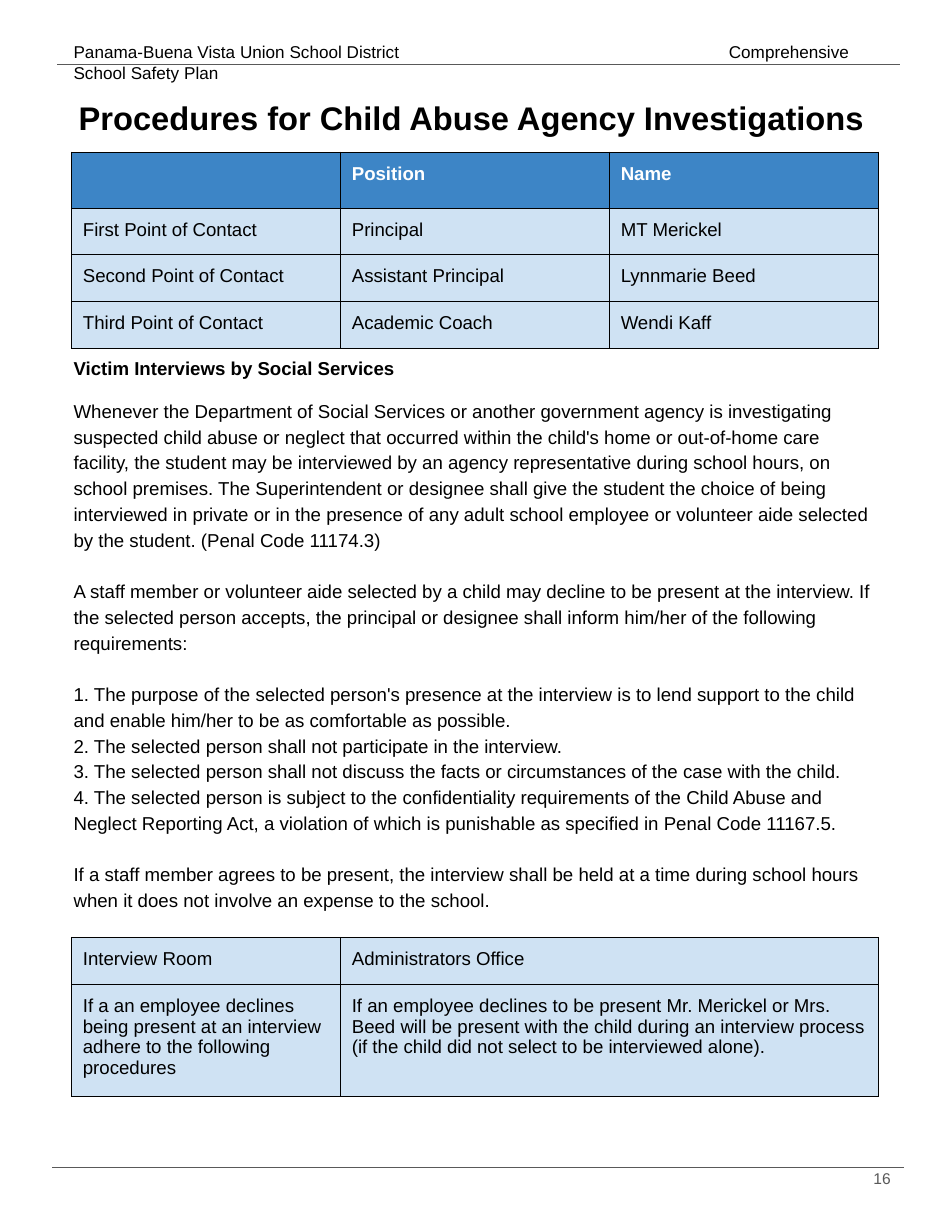
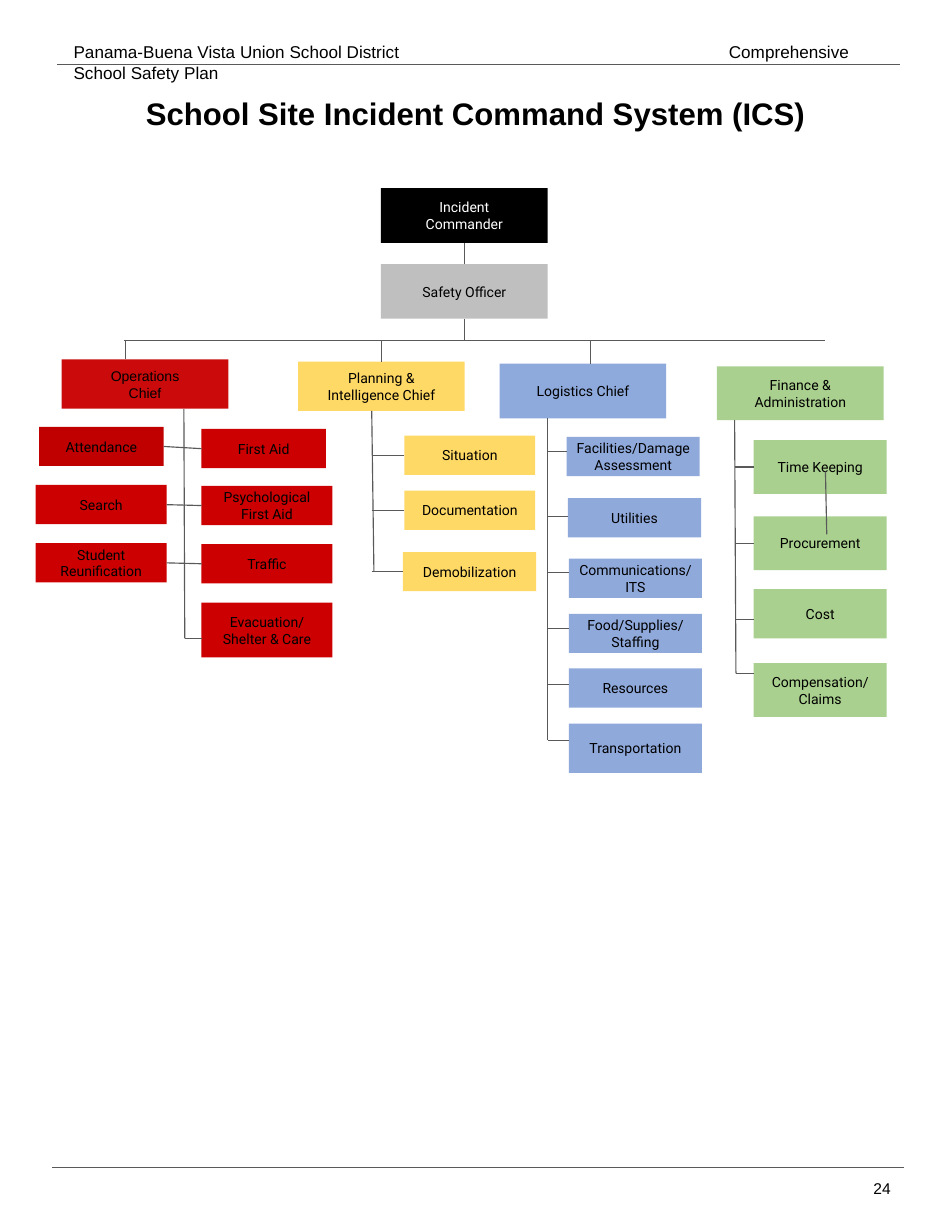
from lxml import etree
from pptx import Presentation
from pptx.dml.color import RGBColor
from pptx.enum.shapes import MSO_CONNECTOR, MSO_SHAPE
from pptx.enum.text import MSO_ANCHOR, PP_ALIGN
from pptx.oxml import parse_xml
from pptx.oxml.ns import nsdecls, qn
from pptx.util import Cm, Pt

COLORS = {
    "black": "000000", "white": "FFFFFF", "rule": "595959",
    "table_head": "3D85C6", "table_body": "CFE2F3",
    "safety": "BFBFBF", "operations_chief": "CB0B0B", "operations": "CC0000",
    "attendance": "C00000", "planning": "FFD965", "logistics_chief": "8EA9DB",
    "logistics": "8FA9DB", "finance": "A9D08E",
}
TOP, LEFT, BOTTOM, RIGHT = range(4)
INSET = 0.25
CHIEF_WIDTH = 3.78
BUS_Y = 7.72


def rgb(color):
    return RGBColor.from_string(COLORS[color])


class Page:
    """Holds the document style and the slide being filled."""

    def __init__(self, deck, font="Arial"):
        self.deck = deck
        self.font = font
        self.slide = None

    def start(self, title, title_size, title_place, number, number_top, number_color):
        """Begin a slide with its running header, footer rule and title."""
        self.slide = self.deck.slides.add_slide(self.deck.slide_layouts[6])
        header = self.text(1.42, 0.69, 19.15, 0.99, [
            "Panama-Buena Vista Union School District\tComprehensive School Safety Plan"], 11)
        tabs = etree.SubElement(header.paragraphs[0]._p.get_or_add_pPr(), qn("a:tabLst"))
        etree.SubElement(tabs, qn("a:tab"), pos=str(Cm(14.86)), algn="l")
        self.line(1.3, 1.47, 20.42, 1.47)
        self.line(1.19, 26.47, 20.5, 26.47)
        left, top = title_place
        self.text(left, top, 19.18, 1.42, [title], title_size, bold=True,
                  align=PP_ALIGN.CENTER)
        self.text(19.15, number_top, 1.3, 1.17, [number], 10, number_color,
                  align=PP_ALIGN.RIGHT)

    def fill_text(self, frame, paragraphs, size, color="black", bold=False,
                  align=PP_ALIGN.LEFT, font=None, inset=INSET):
        frame.word_wrap = True
        frame.margin_left = frame.margin_right = Cm(inset)
        frame.margin_top = frame.margin_bottom = Cm(inset)
        for index, words in enumerate(paragraphs):
            paragraph = frame.add_paragraph() if index else frame.paragraphs[0]
            paragraph.alignment = align
            run = paragraph.add_run()
            run.text = words
            run.font.size = Pt(size)
            run.font.name = font or self.font
            run.font.bold = bold
            run.font.color.rgb = rgb(color)

    def text(self, left, top, width, height, paragraphs, size, color="black", **style):
        frame = self.slide.shapes.add_textbox(
            Cm(left), Cm(top), Cm(width), Cm(height)).text_frame
        self.fill_text(frame, paragraphs, size, color, **style)
        return frame

    def box(self, label, left, top, width, height, fill, color="black", font="Roboto"):
        rect = self.slide.shapes.add_shape(
            MSO_SHAPE.RECTANGLE, Cm(left), Cm(top), Cm(width), Cm(height))
        rect.shadow.inherit = False
        rect.fill.solid()
        rect.fill.fore_color.rgb = rgb(fill)
        rect.line.fill.background()
        rect.text_frame.vertical_anchor = MSO_ANCHOR.MIDDLE
        self.fill_text(rect.text_frame, label.split("\n"), 9, color,
                       align=PP_ALIGN.CENTER, font=font, inset=0.2)
        return rect

    def line(self, x1, y1, x2, y2, begin=None, end=None):
        """Draw a rule; begin and end are optional (box, side) joints."""
        rule = self.slide.shapes.add_connector(
            MSO_CONNECTOR.STRAIGHT, Cm(x1), Cm(y1), Cm(x2), Cm(y2))
        rule.line.color.rgb = rgb("rule")
        rule.line.width = Pt(0.75)
        etree.SubElement(rule._element.spPr, qn("a:effectLst"))
        if begin:
            rule.begin_connect(*begin)
        if end:
            rule.end_connect(*end)

    def table(self, top, rows, heights, head=False, merge_from=None):
        columns = 3
        grid = self.slide.shapes.add_table(
            len(rows), columns, Cm(1.63), Cm(top), Cm(6.1 * columns), Cm(sum(heights))).table
        grid.first_row = head
        grid.horz_banding = False
        for r, (row, height) in enumerate(zip(rows, heights)):
            grid.rows[r].height = Cm(height)
            is_head = head and r == 0
            for c in range(columns):
                cell = grid.cell(r, c)
                self.border(cell)
                cell.fill.solid()
                cell.fill.fore_color.rgb = rgb("table_head" if is_head else "table_body")
                cell.margin_left = cell.margin_right = Cm(INSET)
                cell.margin_top = cell.margin_bottom = Cm(INSET)
                if c < len(row) and row[c]:
                    self.fill_text(cell.text_frame, [row[c]], 12,
                                   "white" if is_head else "black", bold=is_head)
            if merge_from is not None:
                grid.cell(r, merge_from).merge(grid.cell(r, columns - 1))

    @staticmethod
    def border(cell):
        properties = cell._tc.get_or_add_tcPr()
        for side in ("lnL", "lnR", "lnT", "lnB"):
            properties.append(parse_xml(
                f'<a:{side} {nsdecls("a")} w="{Pt(0.75)}"><a:solidFill>'
                f'<a:srgbClr val="{COLORS["black"]}"/></a:solidFill></a:{side}>'))

    def branch(self, chief, trunk, units, fill):
        """Draw a trunk under a chief, then unit boxes; a tick of None joins the box side."""
        x1, x2, trunk_end = trunk
        self.line(x1, (chief.top + chief.height) / Cm(1), x2, trunk_end)
        for label, left, top, width, height, tick in units:
            unit = self.box(label, left, top, width, height, fill)
            if tick is None:
                middle = top + height / 2
                self.line(x1, middle, left, middle, end=(unit, LEFT))
            else:
                self.line(x2, tick, left, tick)


def investigations(page):
    page.start("Procedures for Child Abuse Agency Investigations", 21, (1.1, 1.96),
               "16", 26.29, "rule")
    page.table(3.45, [
        ["", "Position", "Name"],
        ["First Point of Contact", "Principal", "MT Merickel"],
        ["Second Point of Contact", "Assistant Principal", "Lynnmarie Beed"],
        ["Third Point of Contact", "Academic Coach", "Wendi Kaff"],
    ], [1.27] + [1.06] * 3, head=True)
    page.table(21.26, [
        ["Interview Room", "Administrators Office"],
        ["If a an employee declines being present at an interview adhere to the following "
         "procedures",
         "If an employee declines to be present Mr. Merickel or Mrs. Beed will be present with "
         "the child during an interview process (if the child did not select to be interviewed "
         "alone)."],
    ], [1.06, 2.54], merge_from=1)

    passages = [
        ("Victim Interviews by Social Services", 11),
        ("Whenever the Department of Social Services or another government agency is "
         "investigating suspected child abuse or neglect that occurred within the child's home "
         "or out-of-home care facility, the student may be interviewed by an agency "
         "representative during school hours, on school premises. The Superintendent or "
         "designee shall give the student the choice of being interviewed in private or in the "
         "presence of any adult school employee or volunteer aide selected by the student. "
         "(Penal Code 11174.3)", 16.5),
        ("A staff member or volunteer aide selected by a child may decline to be present at the "
         "interview. If the selected person accepts, the principal or designee shall inform "
         "him/her of the following requirements:", 16.5),
        ("1. The purpose of the selected person's presence at the interview is to lend support "
         "to the child and enable him/her to be as comfortable as possible.", 0),
        ("2. The selected person shall not participate in the interview.", 0),
        ("3. The selected person shall not discuss the facts or circumstances of the case with "
         "the child.", 0),
        ("4. The selected person is subject to the confidentiality requirements of the Child "
         "Abuse and Neglect Reporting Act, a violation of which is punishable as specified in "
         "Penal Code 11167.5.", 16.5),
        ("If a staff member agrees to be present, the interview shall be held at a time during "
         "school hours when it does not involve an expense to the school.", 0),
    ]
    body = page.text(1.42, 7.77, 18.72, 13.21, [words for words, _ in passages], 12)
    for paragraph, (_, gap) in zip(body.paragraphs, passages):
        paragraph.line_spacing = 1.15
        paragraph.space_after = Pt(gap)
    body.paragraphs[0].runs[0].font.bold = True


def command_system(page):
    page.start("School Site Incident Command System (ICS)", 20, (1.2, 1.88),
               "24", 26.52, "black")
    commander = page.box("Incident\nCommander", 8.64, 4.27, CHIEF_WIDTH, 1.24, "black", "white")
    safety = page.box("Safety Officer", 8.64, 5.99, CHIEF_WIDTH, 1.24, "safety")
    page.line(10.53, 5.51, 10.53, 5.99, (commander, BOTTOM), (safety, TOP))
    page.line(10.53, 7.23, 10.53, BUS_Y, begin=(safety, BOTTOM))
    page.line(2.82, BUS_Y, 18.72, BUS_Y)

    operations = page.box("Operations\nChief", 1.4, 8.15, CHIEF_WIDTH, 1.12,
                          "operations_chief", font="Arial")
    planning = page.box("Planning &\nIntelligence Chief", 6.76, 8.2, CHIEF_WIDTH, 1.12,
                        "planning")
    logistics = page.box("Logistics Chief", 11.33, 8.25, CHIEF_WIDTH, 1.24, "logistics_chief")
    finance = page.box("Finance &\nAdministration", 16.26, 8.31, CHIEF_WIDTH, 1.22, "finance")
    page.line(2.84, BUS_Y, 2.84, 8.15)
    page.line(8.65, BUS_Y, 8.65, 8.2, end=(planning, TOP))
    page.line(13.4, BUS_Y, 13.4, 8.25)

    page.branch(operations, (4.17, 4.19, 14.48), [
        ("Evacuation/\nShelter & Care", 4.57, 13.67, 2.97, 1.24, 14.48)], "operations")
    pairs = [
        ("Attendance", 0.89, 9.68, 2.82, "attendance", "First Aid", 9.73),
        ("Search", 0.81, 11, 2.97, "operations", "Psychological First Aid", 11.02),
        ("Student Reunification", 0.81, 12.32, 2.97, "operations", "Traffic", 12.34),
    ]
    for near, left, near_top, width, fill, far, far_top in pairs:
        near_unit = page.box(near, left, near_top, width, 0.89, fill)
        far_unit = page.box(far, 4.57, far_top, width, 0.89, "operations")
        page.line(left + width, near_top, 4.57, far_top, (near_unit, RIGHT), (far_unit, LEFT))

    page.branch(planning, (8.43, 8.48, 12.97), [
        ("Situation", 9.17, 9.88, 2.97, 0.89, None),
        ("Documentation", 9.17, 11.13, 2.97, 0.89, None),
        ("Demobilization", 9.14, 12.52, 3.02, 0.89, None),
    ], "planning")
    page.branch(logistics, (12.42, 12.42, 16.79), [
        ("Facilities/Damage Assessment", 12.85, 9.91, 3.02, 0.89, 10.24),
        ("Utilities", 12.88, 11.3, 3.02, 0.89, 11.71),
        ("Communications/\nITS", 12.9, 12.67, 3.02, 0.89, 12.98),
        ("Food/Supplies/ Staffing", 12.9, 13.92, 3.02, 0.89, 14.25),
        ("Resources", 12.9, 15.16, 3.02, 0.89, 15.52),
        ("Transportation", 12.9, 16.41, 3.02, 1.12, 16.79),
    ], "logistics")
    page.branch(finance, (16.66, 16.69, 15.27), [
        ("Time Keeping", 17.09, 9.98, 3.02, 1.22, None),
        ("Procurement", 17.09, 11.71, 3.02, 1.22, None),
        ("Cost", 17.09, 13.36, 3.02, 1.12, 14.05),
        ("Compensation/ Claims", 17.09, 15.04, 3.02, 1.22, 15.27),
    ], "finance")
    page.line(18.72, 10.69, 18.75, 12.12)


def main():
    deck = Presentation()
    deck.slide_width = Cm(21.59)
    deck.slide_height = Cm(27.94)
    page = Page(deck)
    investigations(page)
    command_system(page)
    deck.save("out.pptx")


if __name__ == "__main__":
    main()
